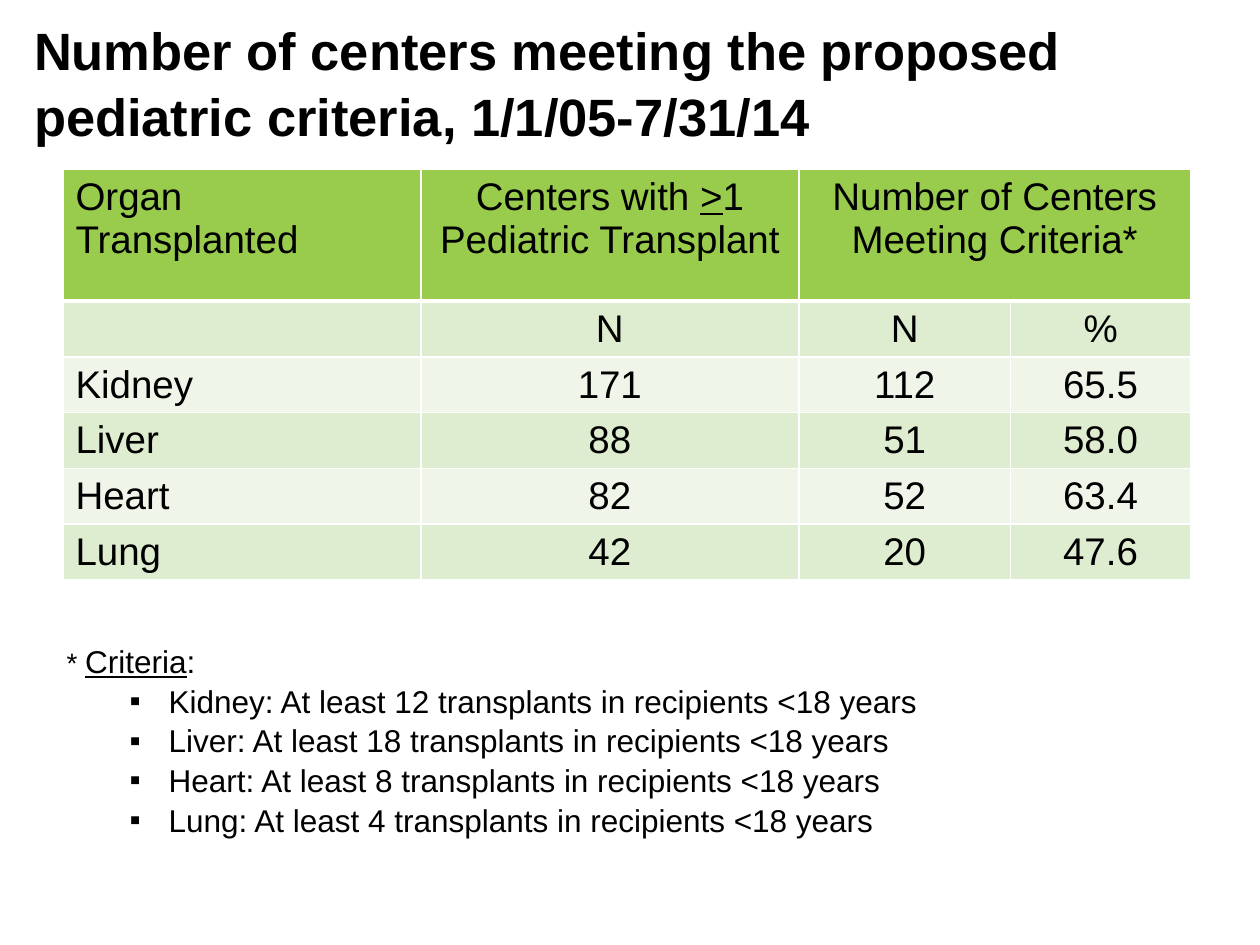
from lxml import etree
from pptx import Presentation
from pptx.dml.color import RGBColor
from pptx.enum.text import MSO_ANCHOR, PP_ALIGN
from pptx.oxml.ns import qn
from pptx.util import Inches, Pt

LEFT, CENTER = PP_ALIGN.LEFT, PP_ALIGN.CENTER
MIDDLE = MSO_ANCHOR.MIDDLE
FONT = "Arial"
COLORS = {"text": "000000", "line": "FFFFFF", "head": "99CC4C",
          "dark": "DEECD0", "light": "EFF6E9"}

WIDTHS = [2.84, 3, 1.68, 1.43]
HEAD_H, ROW_H = 1.05, 0.44
# Each heading is a list of paragraphs, each a list of (text, underlined) runs.
HEADS = [
    [[("Organ", False)], [("Transplanted", False)]],
    [[("Centers with ", False), (">", True), ("1 Pediatric Transplant", False)]],
    [[("Number of Centers", False)], [("Meeting Criteria*", False)]],
]
ROWS = [
    ("", "N", "N", "%"),
    ("Kidney", "171", "112", "65.5"),
    ("Liver", "88", "51", "58.0"),
    ("Heart", "82", "52", "63.4"),
    ("Lung", "42", "20", "47.6"),
]
LIMITS = [("Kidney", 12), ("Liver", 18), ("Heart", 8), ("Lung", 4)]


def add_run(para, text, size, bold=False, under=False):
    run = para.add_run()
    run.text = text
    font = run.font
    font.name, font.size = FONT, Pt(size)
    font.bold, font.underline = bold, under
    font.color.rgb = RGBColor.from_string(COLORS["text"])


def add_title(slide):
    title = slide.shapes.title
    title.left, title.top = Inches(0.17), Inches(0.17)
    title.width, title.height = Inches(9.66), Inches(0.94)
    frame = title.text_frame
    frame.word_wrap = True
    frame.vertical_anchor = MIDDLE
    para = frame.paragraphs[0]
    para.alignment = LEFT
    para.line_spacing = 1.05
    add_run(para, "Number of centers meeting the proposed pediatric criteria, "
                  "1/1/05-7/31/14", 30, bold=True)


def add_borders(cell, base):
    props = cell._tc.get_or_add_tcPr()
    for side, width in (("L", 1), ("R", 1), ("T", 1), ("B", base)):
        line = etree.SubElement(props, qn(f"a:ln{side}"), w=str(Pt(width)))
        fill = etree.SubElement(line, qn("a:solidFill"))
        etree.SubElement(fill, qn("a:srgbClr"), val=COLORS["line"])


def fill_cell(cell, paras, color, align, base=1):
    add_borders(cell, base)
    cell.fill.solid()
    cell.fill.fore_color.rgb = RGBColor.from_string(COLORS[color])
    frame = cell.text_frame
    for i, runs in enumerate(paras):
        para = frame.add_paragraph() if i else frame.paragraphs[0]
        para.alignment = align
        for text, under in runs:
            add_run(para, text, 22, under=under)


def add_table(slide):
    height = HEAD_H + ROW_H * len(ROWS)
    table = slide.shapes.add_table(
        len(ROWS) + 1, len(WIDTHS), Inches(0.5), Inches(1.34),
        Inches(sum(WIDTHS)), Inches(height)).table
    for col, width in zip(table.columns, WIDTHS):
        col.width = Inches(width)
    for i, row in enumerate(table.rows):
        row.height = Inches(ROW_H if i else HEAD_H)
    table.cell(0, 2).merge(table.cell(0, 3))
    for c, paras in enumerate(HEADS):
        fill_cell(table.cell(0, c), paras, "head", CENTER if c else LEFT, 3)
    for r, row in enumerate(ROWS, 1):
        for c, text in enumerate(row):
            paras = [[(text, False)]] if text else []
            fill_cell(table.cell(r, c), paras, "dark" if r % 2 else "light",
                      CENTER if c else LEFT)


def add_bullet(para):
    props = para._p.get_or_add_pPr()
    props.set("marL", str(Inches(0.81)))
    props.set("indent", str(Inches(-0.31)))
    etree.SubElement(props, qn("a:buFont"), typeface=FONT)
    etree.SubElement(props, qn("a:buChar"), char="▪")


def add_notes(slide):
    box = slide.shapes.add_textbox(
        Inches(0.43), Inches(5.03), Inches(9.02), Inches(1.62))
    frame = box.text_frame
    frame.word_wrap = True
    para = frame.paragraphs[0]
    para.line_spacing = 1.05
    add_run(para, "* ", 16)
    add_run(para, "Criteria", 18, under=True)
    add_run(para, ":", 18)
    for organ, count in LIMITS:
        para = frame.add_paragraph()
        para.level = 1
        add_bullet(para)
        para.line_spacing = 1.05
        add_run(para, f"{organ}: At least {count} transplants in recipients "
                      "<18 years", 18)


def main():
    deck = Presentation()
    deck.slide_width, deck.slide_height = Inches(10), Inches(7.5)
    slide = deck.slides.add_slide(deck.slide_layouts[5])
    add_title(slide)
    add_table(slide)
    add_notes(slide)
    deck.save("out.pptx")


if __name__ == "__main__":
    main()
